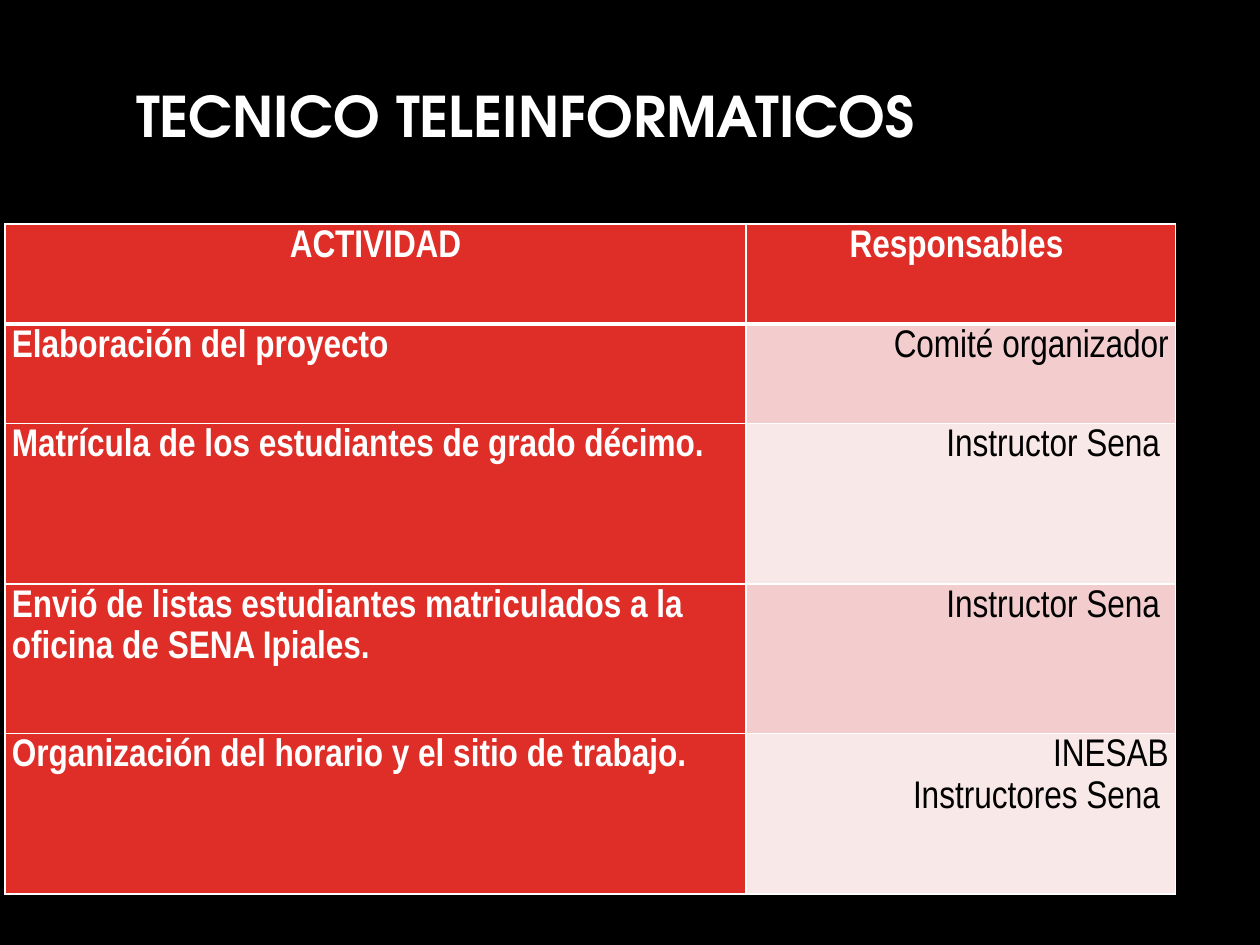
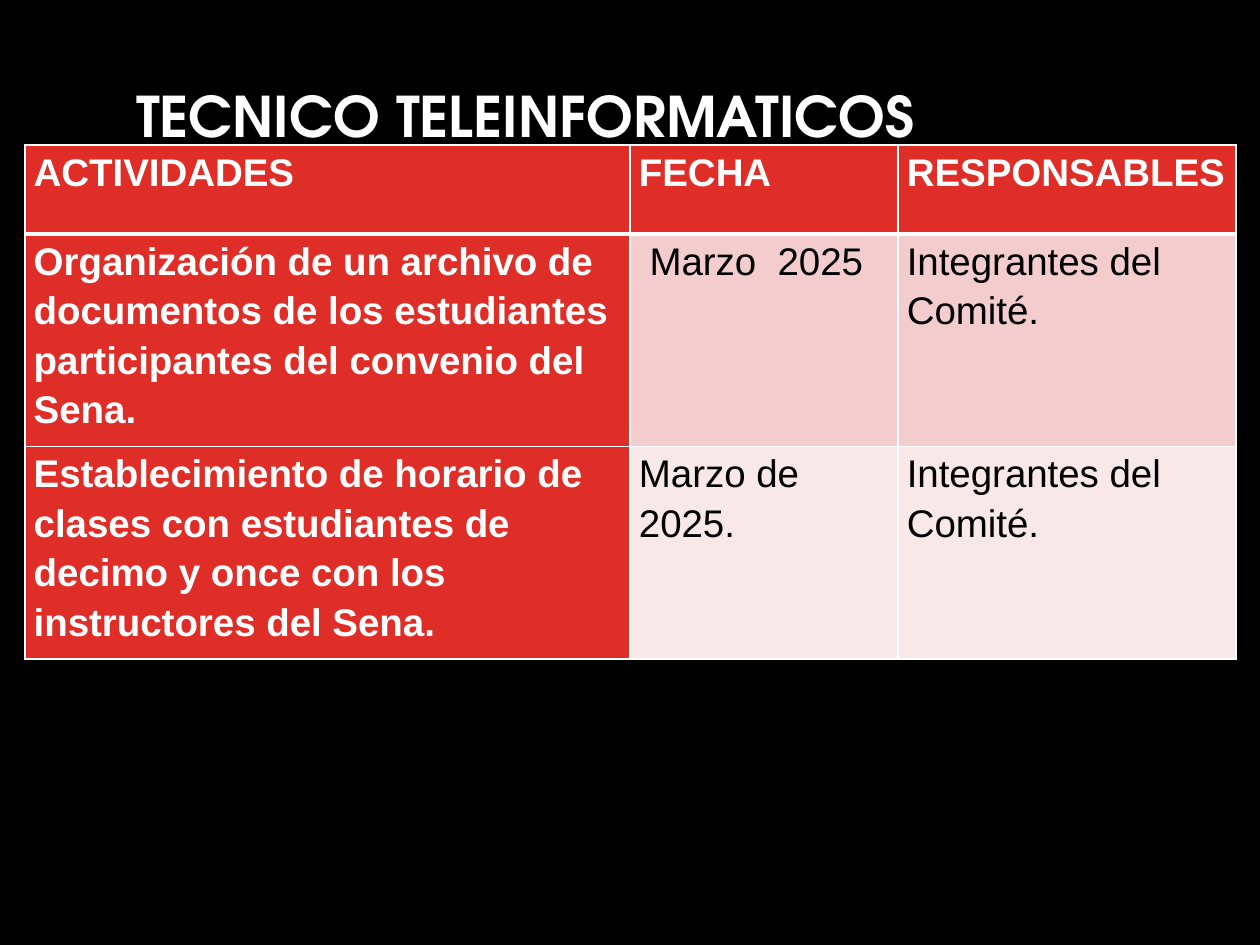
import pptx
import pptx.dml.color
import pptx.enum.text
import pptx.oxml
import pptx.oxml.ns
import pptx.util
from pptx.util import Cm

COLORS = {
    "background": "000000",
    "light_text": "FFFFFF",
    "dark_text": "000000",
    "border": "FFFFFF",
    "red": "DF2E28",
    "band_dark": "F3CDCD",
    "band_light": "F9E8E8",
}
ALIGN = pptx.enum.text.PP_ALIGN
TITLE = "TECNICO TELEINFORMATICOS"
TITLE_FONT = {"name": "TeX Gyre Adventor", "size": pptx.util.Pt(32), "bold": True}
TITLE_PLACE = {"left": Cm(2.49), "top": Cm(1.52), "width": Cm(20.19), "height": Cm(1.63)}
TITLE_FRAME = {
    "word_wrap": True,
    "vertical_anchor": pptx.enum.text.MSO_ANCHOR.TOP,
    "auto_size": pptx.enum.text.MSO_AUTO_SIZE.SHAPE_TO_FIT_TEXT,
}
TABLE_FONT_SIZE = pptx.util.Pt(22)
TABLE_LINE_SPACING = 1.15
THIN, THICK = 1, 3


def rgb(name):
    return pptx.dml.color.RGBColor.from_string(COLORS[name])


def set_attributes(target, values):
    for name, value in values.items():
        setattr(target, name, value)


class Deck:
    """Holds the shared style and the slide being built."""

    def __init__(self):
        self.presentation = pptx.Presentation()
        set_attributes(self.presentation, {"slide_width": Cm(25.4), "slide_height": Cm(19.05)})
        fill = self.presentation.slide_master.background.fill
        fill.solid()
        fill.fore_color.rgb = rgb("background")
        self.slide = None

    def add_slide(self, title):
        layout = self.presentation.slide_layouts.get_by_name("Title Only")
        self.slide = self.presentation.slides.add_slide(layout)
        shape = self.slide.shapes.title
        set_attributes(shape, TITLE_PLACE)
        set_attributes(shape.text_frame, TITLE_FRAME)
        shape.text_frame.text = title
        paragraph = shape.text_frame.paragraphs[0]
        paragraph.alignment = ALIGN.LEFT
        set_attributes(paragraph.font, TITLE_FONT)
        paragraph.font.color.rgb = rgb("light_text")

    def add_table(self, left, top, widths, heights, rows, font, margin,
                  header_align=ALIGN.LEFT, body_align=ALIGN.LEFT):
        """Adds a table with a red header row, a red first column and banded body cells."""
        table = self.slide.shapes.add_table(
            len(rows), len(widths), left, top, sum(widths), sum(heights)).table
        table.first_col = True
        for column, width in zip(table.columns, widths):
            column.width = width
        for row, height in zip(table.rows, heights):
            row.height = height
        for row_index, texts in enumerate(rows):
            for column_index, text in enumerate(texts):
                cell = table.cell(row_index, column_index)
                set_attributes(cell, {"margin_left": margin, "margin_right": margin,
                                      "margin_top": 0, "margin_bottom": 0})
                is_header = row_index == 0
                is_red = is_header or column_index == 0
                if is_header:
                    alignment = header_align
                else:
                    alignment = ALIGN.LEFT if is_red else body_align
                band = "band_dark" if row_index % 2 else "band_light"
                cell.fill.solid()
                cell.fill.fore_color.rgb = rgb("red" if is_red else band)
                self.write_cell(cell, text, font, is_red, alignment)
                self.add_borders(cell, THICK if row_index == 1 else THIN,
                                 THICK if is_header else THIN)

    def write_cell(self, cell, text, font, is_red, alignment):
        cell.text = text
        for paragraph in cell.text_frame.paragraphs:
            set_attributes(paragraph, {"alignment": alignment,
                                       "line_spacing": TABLE_LINE_SPACING})
            set_attributes(paragraph.font, {"name": font, "size": TABLE_FONT_SIZE,
                                            "bold": is_red})
            paragraph.font.color.rgb = rgb("light_text" if is_red else "dark_text")

    def add_borders(self, cell, top, bottom):
        properties = cell._tc.get_or_add_tcPr()
        sides = {"L": THIN, "R": THIN, "T": top, "B": bottom}
        for position, (side, width) in enumerate(sides.items()):
            properties.insert(position, pptx.oxml.parse_xml(
                f'<a:ln{side} {pptx.oxml.ns.nsdecls("a")} w="{pptx.util.Pt(width)}">'
                f'<a:solidFill><a:srgbClr val="{COLORS["border"]}"/></a:solidFill>'
                f'</a:ln{side}>'))


def main():
    deck = Deck()

    deck.add_slide(TITLE)
    deck.add_table(
        Cm(0.1), Cm(4.52),
        widths=[Cm(14.94), Cm(8.66)],
        heights=[Cm(2.01), Cm(2.01), Cm(3.23), Cm(3.02), Cm(3.23)],
        rows=[
            ("ACTIVIDAD", "Responsables "),
            ("Elaboración del proyecto", "Comité organizador"),
            ("Matrícula de los estudiantes de grado décimo.", "Instructor Sena "),
            ("Envió de listas estudiantes matriculados a la oficina de SENA Ipiales.",
             "Instructor Sena "),
            ("Organización del horario y el sitio de trabajo.", "INESAB\nInstructores Sena "),
        ],
        font="Arial Narrow", margin=Cm(0.14),
        header_align=ALIGN.CENTER, body_align=ALIGN.RIGHT)

    deck.add_slide(TITLE)
    deck.add_table(
        Cm(0.5), Cm(2.92),
        widths=[Cm(12.2), Cm(5.4), Cm(6.82)],
        heights=[Cm(1.8), Cm(3.78), Cm(3.78)],
        rows=[
            ("ACTIVIDADES", "FECHA", "RESPONSABLES"),
            ("Organización de un archivo de documentos de los estudiantes "
             "participantes del convenio del Sena.",
             " Marzo  2025", "Integrantes del Comité."),
            ("Establecimiento de horario de clases con estudiantes de decimo y once "
             "con los instructores del Sena.",
             "Marzo de 2025.", "Integrantes del Comité."),
        ],
        font="Arial", margin=Cm(0.18))

    deck.presentation.save("out.pptx")


if __name__ == "__main__":
    main()
